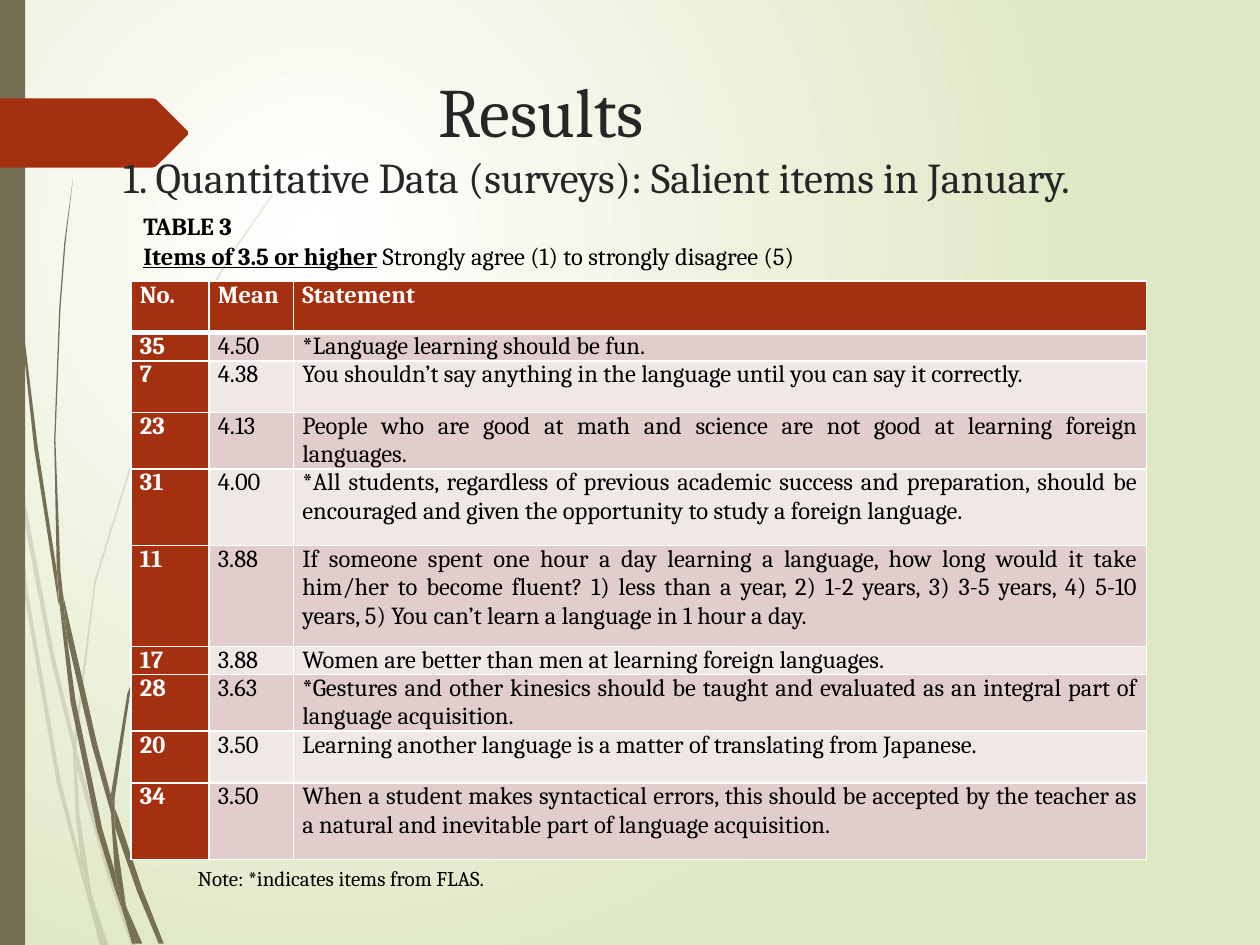
from lxml import etree
from pptx import Presentation
from pptx.dml.color import RGBColor
from pptx.enum.shapes import MSO_SHAPE
from pptx.enum.text import MSO_ANCHOR, PP_ALIGN
from pptx.oxml.ns import qn
from pptx.util import Inches, Pt

COLORS = {
    "olive": "766F54", "rust": "A53010", "title": "262626", "white": "FFFFFF",
    "black": "000000", "green": "DFE8C4", "band": "E1CDCC", "pale": "F0E8E7",
}
FONT = "Cambria"
COLUMN_WIDTHS = [0.62, 0.67, 6.77]
ROW_HEIGHTS = [0.41, 0.2, 0.41, 0.41, 0.61, 0.8, 0.2, 0.41, 0.41, 0.61]
ROWS = [
    ("No.", "Mean", "Statement"),
    ("35", "4.50", "*Language learning should be fun."),
    ("7", "4.38", "You shouldn’t say anything in the language until you can say it correctly."),
    ("23", "4.13", "People who are good at math and science are not good at learning foreign languages."),
    ("31", "4.00", "*All students, regardless of previous academic success and preparation, "
     "should be encouraged and given the opportunity to study a foreign language."),
    ("11", "3.88", "If someone spent one hour a day learning a language, how long would it take "
     "him/her to become fluent? 1) less than a year, 2) 1-2 years, 3) 3-5 years, 4) 5-10 years, "
     "5) You can’t learn a language in 1 hour a day."),
    ("17", "3.88", "Women are better than men at learning foreign languages."),
    ("28", "3.63", "*Gestures and other kinesics should be taught and evaluated as an integral "
     "part of language acquisition."),
    ("20", "3.50", "Learning another language is a matter of translating from Japanese."),
    ("34", "3.50", "When a student makes syntactical errors, this should be accepted by the "
     "teacher as a natural and inevitable part of language acquisition."),
]

# Grass blade outlines, in inches on the slide
PALE_BLADES = [
    [(0.08, 3.5), (0.06, 3.22), (0, 2.82), (0, 2.99), (0.07, 3.44)],
    [(0.4, 5.22), (0.59, 5.99), (0.59, 5.86), (0.43, 5.2), (0.1, 3.45), (0.12, 3.76)],
    [(0.64, 6.07), (0.61, 5.96), (0.61, 6.1), (0.85, 6.94), (1.04, 7.5), (1.08, 7.5), (0.88, 6.92)],
    [(0.83, 7.5), (0.86, 7.5), (0.73, 7.11)],
    [(0.64, 6.83), (0.48, 6.19), (0.22, 4.69), (0.12, 3.76), (0.08, 3.5), (0.19, 4.7),
     (0.45, 6.21), (0.64, 6.93), (0.7, 7.14), (0.69, 7.07)],
    [(0.58, 5.99), (0.6, 6.46), (0.64, 6.83), (0.73, 7.11), (0.63, 6.46), (0.61, 6.1)],
    [(0.61, 5.84), (0.76, 4.62), (1.11, 3.49), (1.59, 2.45), (1.87, 1.98), (2.17, 1.54),
     (2.17, 1.53), (1.86, 1.97), (1.58, 2.44), (1.1, 3.48), (0.75, 4.61), (0.59, 5.84), (0.61, 5.96)],
    [(0.7, 7.14), (0.79, 7.5), (0.82, 7.5)],
    [(0.61, 6.08), (0.61, 5.96), (0.59, 5.86), (0.58, 5.99)],
    [(0.67, 6.92), (0.65, 6.83), (0.7, 7.14), (0.82, 7.5), (0.83, 7.5), (0.73, 7.11)],
]
DARK_BLADES = [
    [(0.05, 1.1), (0.14, 2.33), (0.27, 3.55), (0.46, 4.77), (0.47, 4.81), (0.45, 4.53),
     (0.3, 3.55), (0.15, 2.32), (0.06, 1.09), (0.03, 0), (0.02, 0)],
    [(0.73, 5.92), (0.88, 6.45), (0.88, 6.31), (0.77, 5.9), (0.5, 4.72), (0.53, 5.05)],
    [(0.94, 6.49), (0.91, 6.41), (0.91, 6.56), (1.09, 7.08), (1.26, 7.49), (1.3, 7.49), (1.13, 7.06)],
    [(0.91, 6.91), (0.81, 6.57), (0.6, 5.56), (0.53, 5.05), (0.47, 4.77), (0.56, 5.57),
     (0.77, 6.59), (0.92, 7.08), (0.97, 7.22)],
    [(0.5, 4.72), (0.48, 4.53), (0.44, 3.49), (0.48, 2.45), (0.52, 1.93), (0.58, 1.41),
     (0.51, 1.93), (0.47, 2.45), (0.43, 3.49), (0.45, 4.49), (0.49, 4.72)],
    [(1.1, 7.49), (1.13, 7.49), (1, 7.19)],
    [(0.47, 4.77), (0.53, 5.05), (0.5, 4.72), (0.45, 4.49)],
    [(0.91, 6.33), (1.03, 5.52), (1.31, 4.76), (1.69, 4.06), (1.91, 3.74), (2.16, 3.44),
     (2.15, 3.44), (1.91, 3.73), (1.68, 4.05), (1.29, 4.74), (1.01, 5.51), (0.88, 6.31), (0.91, 6.41)],
    [(0.97, 7.22), (1.05, 7.49), (1.08, 7.49)],
    [(0.88, 6.45), (0.91, 6.91), (1, 7.19), (0.91, 6.56)],
    [(0.88, 6.45), (0.91, 6.56), (0.91, 6.41), (0.88, 6.31)],
    [(0.96, 7.06), (0.91, 6.91), (0.97, 7.22), (1.08, 7.49), (1.1, 7.49), (1, 7.19)],
]
ARROW = [(0, 0.78), (1.21, 0.78), (1.24, 0.79), (1.49, 1.04), (1.49, 1.07),
         (1.24, 1.32), (1.21, 1.33), (0, 1.33)]


def rgb(name):
    return RGBColor.from_string(COLORS[name])


def add_run(paragraph, text, size, color="black", **formats):
    run = paragraph.add_run()
    run.text = text
    run.font.color.rgb = rgb(color)
    for name, value in {"name": FONT, "size": Pt(size), **formats}.items():
        setattr(run.font, name, value)


def paint(shape, color, alpha=None):
    shape.shadow.inherit = False
    shape.fill.solid()
    shape.fill.fore_color.rgb = rgb(color)
    shape.line.fill.background()
    if alpha:
        fill_color = shape.fill._xPr.find(qn("a:solidFill"))[0]
        etree.SubElement(fill_color, qn("a:alpha"), val=str(alpha * 1000))


def add_outline(slide, points, color, alpha=None):
    start, *others = [(Inches(x), Inches(y)) for x, y in points]
    builder = slide.shapes.build_freeform(*start)
    builder.add_line_segments(others, close=True)
    paint(builder.convert_to_shape(), color, alpha)


def add_background(slide):
    fill = slide.background.fill
    fill.gradient()
    for stop, color in zip(fill.gradient_stops, ("white", "green")):
        stop.color.rgb = rgb(color)
    # Circular gradient centred in the upper left
    linear = slide.background._cSld.find(".//" + qn("a:lin"))
    circle = etree.Element(qn("a:path"), path="circle")
    etree.SubElement(circle, qn("a:fillToRect"), l="50000", t="50000", r="100000", b="100000")
    linear.getparent().replace(linear, circle)


def add_decoration(slide, height):
    for points in PALE_BLADES:
        add_outline(slide, points, "olive", 20)
    for points in DARK_BLADES:
        add_outline(slide, points, "olive")
    bar = slide.shapes.add_shape(MSO_SHAPE.RECTANGLE, 0, 0, Inches(0.2), height)
    paint(bar, "olive")
    add_outline(slide, ARROW, "rust")


def fill_title(slide, left, top, width, height):
    title = slide.shapes.title
    box = {"left": left, "top": top, "width": width, "height": height}
    for name, value in box.items():
        setattr(title, name, value)
    frame = title.text_frame
    frame.word_wrap = True
    frame.vertical_anchor = MSO_ANCHOR.TOP
    heading, subheading = frame.paragraphs[0], frame.add_paragraph()
    add_run(heading, "Results", 39.6, "title")
    add_run(subheading, "1. Quantitative Data (surveys): Salient items in January.", 24.3, "title")
    for paragraph, indent in ((heading, 2.5), (subheading, 0)):
        paragraph.alignment = PP_ALIGN.LEFT
        paragraph.space_before = Pt(0)
        properties = paragraph._p.get_or_add_pPr()
        properties.set("marL", str(Inches(indent)))
        properties.set("indent", "0")


def add_cell_borders(cell, bottom_width):
    properties = cell._tc.get_or_add_tcPr()
    widths = {"a:lnL": 1, "a:lnR": 1, "a:lnT": 1, "a:lnB": bottom_width}
    for position, (tag, width) in enumerate(widths.items()):
        line = etree.Element(qn(tag), w=str(Pt(width)))
        fill = etree.SubElement(line, qn("a:solidFill"))
        etree.SubElement(fill, qn("a:srgbClr"), val=COLORS["white"])
        properties.insert(position, line)


def add_survey_table(slide, left, top, width, height):
    table = slide.shapes.add_table(len(ROWS), len(COLUMN_WIDTHS), left, top, width, height).table
    for column, column_width in zip(table.columns, COLUMN_WIDTHS):
        column.width = Inches(column_width)
    for row_index, (row, row_height) in enumerate(zip(table.rows, ROW_HEIGHTS)):
        row.height = Inches(row_height)
        for column_index, cell in enumerate(row.cells):
            is_header = row_index == 0 or column_index == 0
            margins = {"margin_left": 0.07, "margin_right": 0.07, "margin_top": 0, "margin_bottom": 0}
            for name, value in margins.items():
                setattr(cell, name, Inches(value))
            cell.fill.solid()
            cell.fill.fore_color.rgb = rgb("rust" if is_header else "band" if row_index % 2 else "pale")
            add_cell_borders(cell, 3 if row_index == 0 else 1)
            paragraph = cell.text_frame.paragraphs[0]
            paragraph.alignment = PP_ALIGN.JUSTIFY
            add_run(paragraph, ROWS[row_index][column_index], 14,
                    "white" if is_header else "black", bold=is_header)


def add_caption(slide, left, top, width, height):
    frame = slide.shapes.add_textbox(left, top, width, height).text_frame
    frame.word_wrap = True
    frame.vertical_anchor = MSO_ANCHOR.MIDDLE
    frame.margin_bottom = Inches(0.28)
    add_run(frame.paragraphs[0], "TABLE 3", 14, bold=True)
    scale = frame.add_paragraph()
    add_run(scale, "Items of 3.5 or higher", 14, bold=True, underline=True)
    add_run(scale, " Strongly agree (1) to strongly disagree (5)", 14)


def add_note(slide, left, top, width, height):
    frame = slide.shapes.add_textbox(left, top, width, height).text_frame
    frame.word_wrap = True
    add_run(frame.paragraphs[0], "Note: *indicates items from FLAS.", 12)


def main():
    presentation = Presentation()
    presentation.slide_width, presentation.slide_height = Inches(10), Inches(7.5)
    slide = presentation.slides.add_slide(presentation.slide_layouts[5])
    add_background(slide)
    add_decoration(slide, presentation.slide_height)
    # Keep the title in front of the decoration
    slide.shapes._spTree.append(slide.shapes.title._element)
    fill_title(slide, Inches(0.88), Inches(0.49), Inches(8.22), Inches(1.4))
    add_survey_table(slide, Inches(1.04), Inches(2.23), Inches(8.06), Inches(4.52))
    add_caption(slide, Inches(1.04), Inches(1.62), Inches(6.3), Inches(0.81))
    add_note(slide, Inches(1.47), Inches(6.82), Inches(6.23), Inches(0.3))
    presentation.save("out.pptx")


if __name__ == "__main__":
    main()
